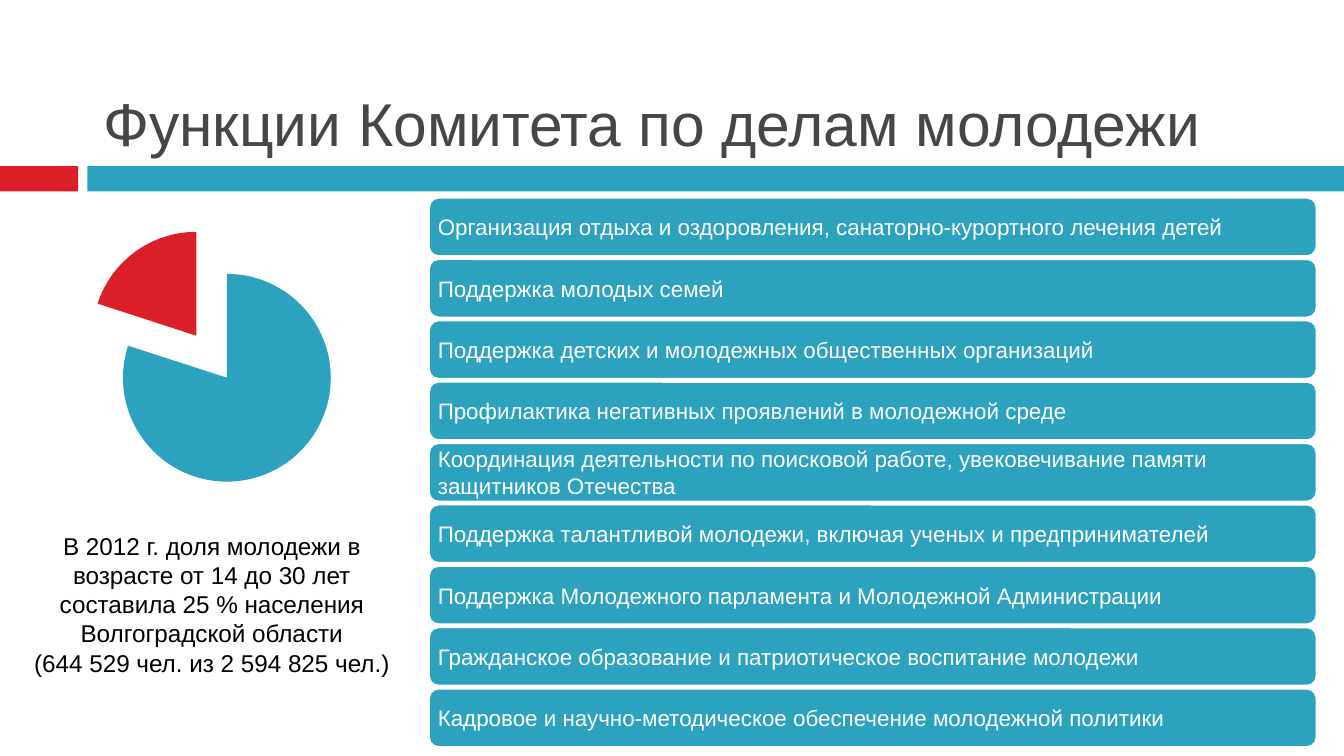
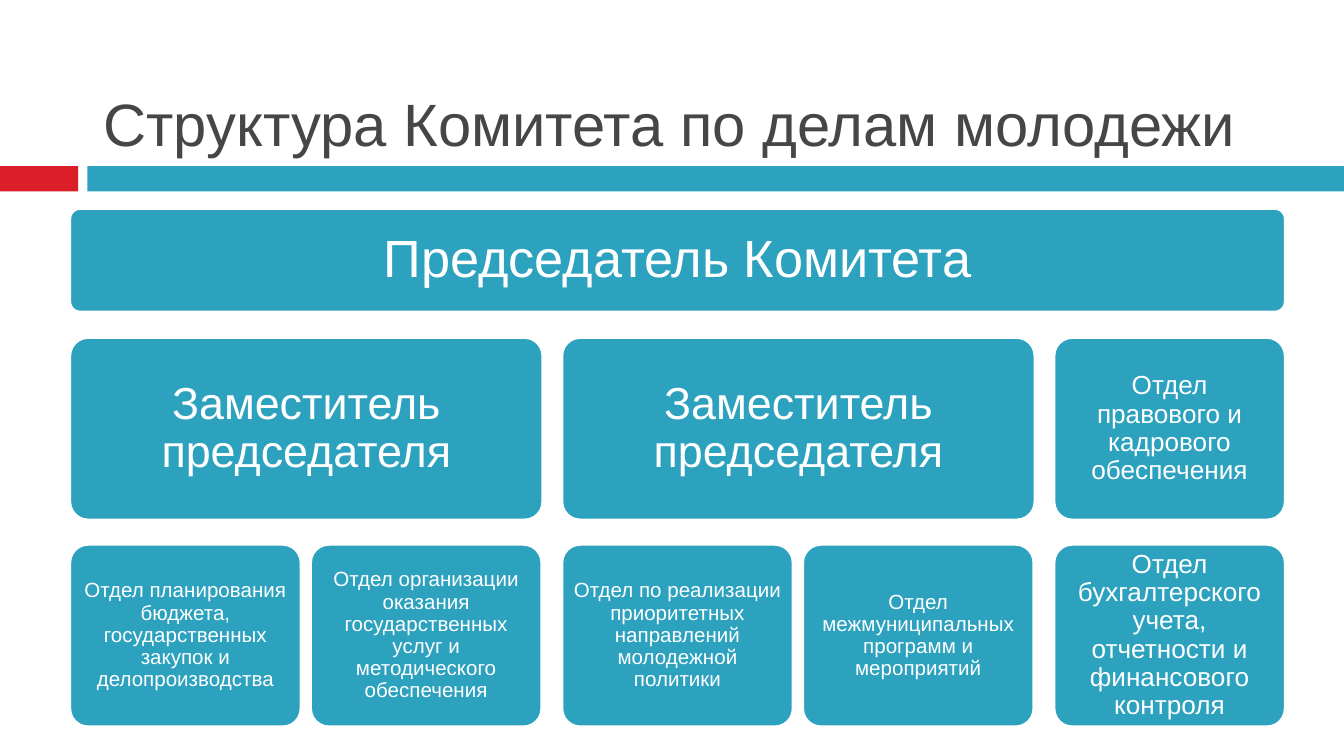
from lxml.etree import SubElement
from pptx import Presentation
from pptx.chart.data import CategoryChartData
from pptx.dml.color import RGBColor
from pptx.enum.chart import XL_CHART_TYPE
from pptx.enum.shapes import MSO_SHAPE
from pptx.enum.text import MSO_ANCHOR, MSO_AUTO_SIZE, PP_ALIGN
from pptx.oxml.ns import qn
from pptx.util import Cm, Pt

COLORS = {
    "teal": "2DA2BF",
    "red": "DA1F28",
    "title": "464646",
    "text": "000000",
    "white": "FFFFFF",
}
TITLE_ONLY = 5

FUNCTIONS = [
    "Организация отдыха и оздоровления, санаторно-курортного лечения детей",
    "Поддержка молодых семей",
    "Поддержка детских и молодежных общественных организаций",
    "Профилактика негативных проявлений в молодежной среде",
    "Координация деятельности по поисковой работе, увековечивание памяти защитников Отечества",
    "Поддержка талантливой молодежи, включая ученых и предпринимателей",
    "Поддержка Молодежного парламента и Молодежной Администрации",
    "Гражданское образование и патриотическое воспитание молодежи",
    "Кадровое и научно-методическое обеспечение молодежной политики",
]
DEPUTY = "Заместитель председателя"
DEPUTY_UNITS = [
    [
        "Отдел планирования бюджета, государственных закупок и делопроизводства",
        "Отдел организации оказания государственных услуг и методического обеспечения",
    ],
    [
        "Отдел по реализации приоритетных направлений молодежной политики",
        "Отдел межмуниципальных программ и мероприятий",
    ],
]
DIRECT_UNITS = [
    "Отдел правового и кадрового обеспечения",
    "Отдел бухгалтерского учета, отчетности и финансового контроля",
]


def rgb(name):
    return RGBColor.from_string(COLORS[name])


def set_attrs(obj, **values):
    for name, value in values.items():
        setattr(obj, name, value)


class Deck:
    def __init__(self):
        self.prs = Presentation()
        set_attrs(self.prs, slide_width=Cm(25.4), slide_height=Cm(14.29))
        self.slide = None

    def new_slide(self, title, size):
        """Start a slide with the shared bands and title."""
        self.slide = self.prs.slides.add_slide(self.prs.slide_layouts[TITLE_ONLY])
        self.shape(MSO_SHAPE.RECTANGLE, (0, 3.14, 1.48, 0.48), "red")
        self.shape(MSO_SHAPE.RECTANGLE, (1.65, 3.14, 23.75, 0.48), "teal")
        sp = self.slide.shapes.title
        left, top, width, height = map(Cm, (1.7, 0.33, 22.66, 2.8))
        set_attrs(sp, left=left, top=top, width=width, height=height)
        self.fill_text(sp, [title], size, "title", anchor=MSO_ANCHOR.BOTTOM)

    def fill_text(self, sp, lines, size, color, align=PP_ALIGN.LEFT,
                  anchor=MSO_ANCHOR.MIDDLE, inset=None, **spacing):
        tf = sp.text_frame
        tf.text = "\n".join(lines)
        set_attrs(tf, word_wrap=True, auto_size=MSO_AUTO_SIZE.NONE,
                  vertical_anchor=anchor)
        if inset is not None:
            for side in ("left", "top", "right", "bottom"):
                setattr(tf, f"margin_{side}", Cm(inset))
        for p in tf.paragraphs:
            set_attrs(p, alignment=align, **spacing)
            for r in p.runs:
                set_attrs(r.font, name="Arial", size=Pt(size))
                r.font.color.rgb = rgb(color)

    def shape(self, kind, box, fill):
        sp = self.slide.shapes.add_shape(kind, *map(Cm, box))
        sp.shadow.inherit = False
        sp.fill.solid()
        sp.fill.fore_color.rgb = rgb(fill)
        sp.line.fill.background()
        return sp

    def card(self, box, text, size, inset, radius=None, **text_format):
        sp = self.shape(MSO_SHAPE.ROUNDED_RECTANGLE, box, "teal")
        sp.line.color.rgb = rgb("white")
        sp.line.width = Pt(1.5)
        if radius is not None:
            sp.adjustments[0] = radius
        self.fill_text(sp, [text], size, "white", inset=inset, **text_format)

    def unit(self, box, text, size, inset):
        """Add one centred card of the organisation chart."""
        self.card(box, text, size, inset, radius=0.1,
                  align=PP_ALIGN.CENTER, line_spacing=0.9)

    def caption(self, box, lines, size):
        sp = self.slide.shapes.add_textbox(*map(Cm, box))
        self.fill_text(sp, lines, size, "text", align=PP_ALIGN.CENTER)

    def pie(self, box, values, colors, explosion):
        data = CategoryChartData()
        data.categories = [str(i + 1) for i in range(len(values))]
        data.add_series("Series 1", values)
        chart = self.slide.shapes.add_chart(
            XL_CHART_TYPE.PIE, *map(Cm, box), data).chart
        set_attrs(chart, has_legend=False, has_title=False)
        set_attrs(chart.font, name="Calibri", size=Pt(18))
        chart.font.color.rgb = rgb("text")
        chart.plots[0].vary_by_categories = True
        series = chart.plots[0].series[0]
        for i, color in enumerate(colors):
            fill = series.points[i].format.fill
            fill.solid()
            fill.fore_color.rgb = rgb(color)
        ser = series._element
        node = SubElement(ser, qn("c:explosion"), val=str(explosion))
        ser.find(qn("c:dPt")).addprevious(node)


def functions_slide(deck):
    deck.new_slide("Функции Комитета по делам молодежи", 32.4)
    for i, text in enumerate(FUNCTIONS):
        deck.card((8.1, 3.73 + 1.16 * i, 16.79, 1.12), text, 12, 0.12,
                  space_after=Pt(6))
    deck.pie((0, 3.94, 8, 5.61), (80, 20), ("teal", "red"), 25)
    deck.caption((0.3, 9.02, 7.4, 4.8), [
        "В 2012 г. доля молодежи в возрасте от 14 до 30 лет составила 25 % "
        "населения Волгоградской области",
        "(644 529 чел. из 2 594 825 чел.)",
    ], 13)


def structure_slide(deck):
    left, group_step, unit_step = 1.32, 9.3, 4.55
    unit_w, deputy_w, height = 4.37, 8.94, 3.45
    rows = (6.38, 10.29)

    deck.new_slide("Структура Комитета по делам молодежи", 32)
    deck.unit((left, 3.94, 2 * group_step + unit_w, 1.96),
              "Председатель Комитета", 28, 0.3)
    for group, units in enumerate(DEPUTY_UNITS):
        x = left + group_step * group
        deck.unit((x, rows[0], deputy_w, height), DEPUTY, 24, 0.25)
        for i, text in enumerate(units):
            deck.unit((x + unit_step * i, rows[1], unit_w, height), text, 11, 0.12)
    for y, text in zip(rows, DIRECT_UNITS):
        deck.unit((left + 2 * group_step, y, unit_w, height), text, 14, 0.15)


def main():
    deck = Deck()
    functions_slide(deck)
    structure_slide(deck)
    deck.prs.save("out.pptx")


if __name__ == "__main__":
    main()
